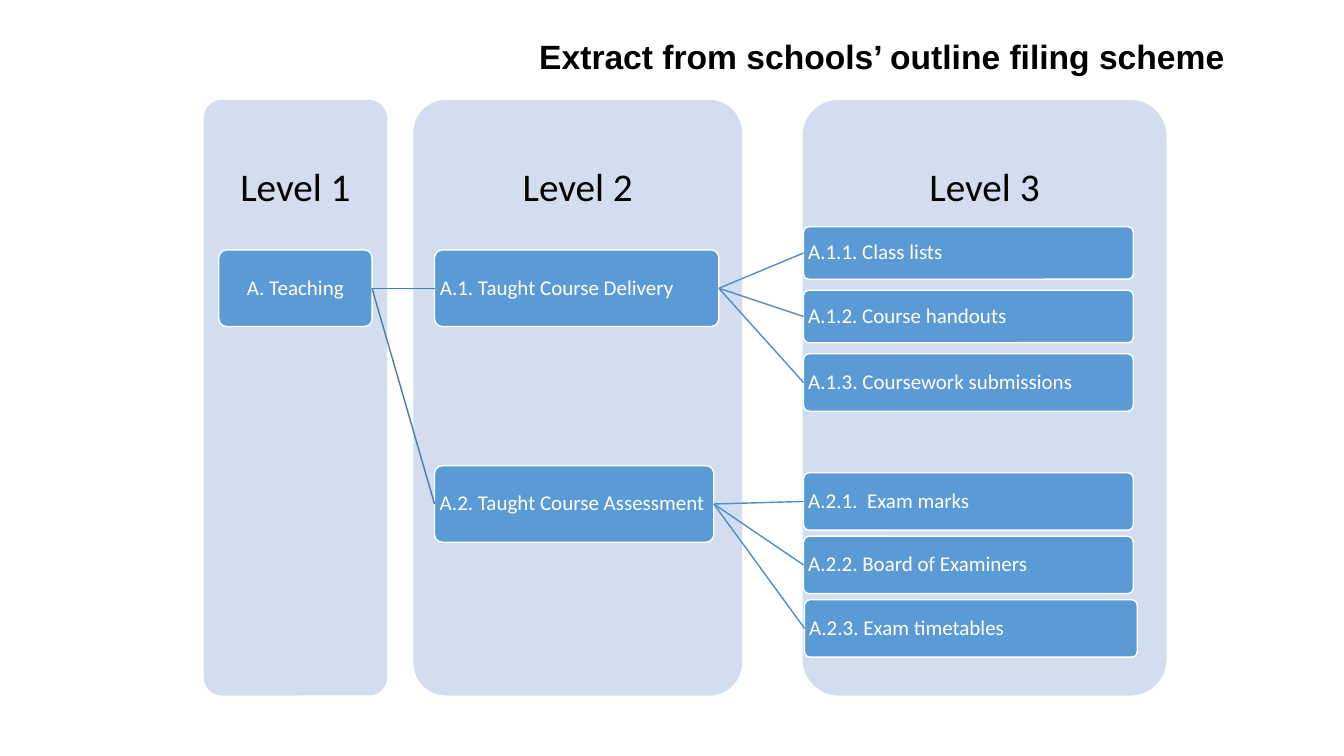
import pptx
import pptx.util
import pptx.dml.color
import pptx.enum.shapes
import pptx.enum.text
import pptx.oxml.ns
from lxml import etree

# Content
TITLE = "Extract from schools’ outline filing scheme"
LEVELS = ["Level 1", "Level 2", "Level 3"]
ROOT = "A. Teaching"
# Each branch: text, width, top of first leaf, leaves as (text, height, width, shift right)
BRANCHES = [
    ("A.1. Taught Course Delivery", 2.82, 2.25, [
        ("A.1.1. Class lists", 0.52, 3.27, 0),
        ("A.1.2. Course handouts", 0.52, 3.27, 0),
        ("A.1.3. Coursework submissions", 0.57, 3.27, 0),
    ]),
    ("A.2. Taught Course Assessment", 2.77, 4.69, [
        ("A.2.1.  Exam marks", 0.57, 3.27, 0),
        ("A.2.2. Board of Examiners", 0.57, 3.27, 0),
        ("A.2.3. Exam timetables", 0.57, 3.3, 0.01),
    ]),
]
COLORS = {"panel": "D2DEEF", "node": "5B9BD5", "white": "FFFFFF", "black": "000000",
          "root line": "497CAB", "branch line": "538DC1"}

# Grid in inches
SLIDE_WIDTH, SLIDE_HEIGHT = 13.33, 7.5
PANEL_COLUMNS = [(2.02, 1.82), (4.1, 3.26), (7.96, 3.61)]
PANEL_TOP, PANEL_HEIGHT = 0.99, 5.91
HEADING_HEIGHT = 0.3 * PANEL_HEIGHT
ROOT_LEFT, BRANCH_LEFT, LEAF_LEFT = 2.17, 4.31, 7.97
ROOT_WIDTH, NODE_HEIGHT = 1.52, 0.76
BRANCH_TOP, BRANCH_PITCH = 2.48, 2.14
LEAF_PITCH = 0.63
LEFT_SIDE, RIGHT_SIDE = 1, 3

ALIGN = pptx.enum.text.PP_ALIGN
ANCHOR = pptx.enum.text.MSO_ANCHOR
inches = pptx.util.Inches

presentation = pptx.Presentation()
presentation.slide_width = inches(SLIDE_WIDTH)
presentation.slide_height = inches(SLIDE_HEIGHT)
slide = presentation.slides.add_slide(presentation.slide_layouts[6])


def color(name):
    return pptx.dml.color.RGBColor.from_string(COLORS[name])


def write(shape, text, *, size, fill="black", font="Calibri", bold=False,
          align=ALIGN.LEFT, anchor=ANCHOR.MIDDLE, margins=(0.03, 0.03), spacing=0.9):
    frame = shape.text_frame
    frame.word_wrap = True
    frame.vertical_anchor = anchor
    frame.margin_left = frame.margin_right = inches(margins[0])
    frame.margin_top = frame.margin_bottom = inches(margins[1])
    paragraph = frame.paragraphs[0]
    paragraph.alignment = align
    paragraph.line_spacing = spacing
    run = paragraph.add_run()
    run.text = text
    run.font.name = font
    run.font.size = pptx.util.Pt(size)
    run.font.bold = bold
    run.font.color.rgb = color(fill)


def add_box(left, top, width, height, fill, outline=None):
    shape = slide.shapes.add_shape(pptx.enum.shapes.MSO_SHAPE.ROUNDED_RECTANGLE,
                                   inches(left), inches(top), inches(width), inches(height))
    shape.adjustments[0] = 0.1
    shape.shadow.inherit = False
    shape.fill.solid()
    shape.fill.fore_color.rgb = color(fill)
    if outline:
        shape.line.color.rgb = color(outline)
        shape.line.width = pptx.util.Pt(1)
    else:
        shape.line.fill.background()
    return shape


def add_node(text, left, top, width, height, align=ALIGN.LEFT):
    node = add_box(left, top, width, height, "node", "white")
    write(node, text, size=15, fill="white", align=align)
    return node


def join(parent, child, line_color):
    connector = slide.shapes.add_connector(pptx.enum.shapes.MSO_CONNECTOR.STRAIGHT, 0, 0, 0, 0)
    connector.begin_connect(parent, RIGHT_SIDE)
    connector.end_connect(child, LEFT_SIDE)
    connector.line.color.rgb = color(line_color)
    connector.line.width = pptx.util.Pt(1)
    etree.SubElement(connector._element.spPr, pptx.oxml.ns.qn("a:effectLst"))


# Level panels and headings
for level, (left, width) in zip(LEVELS, PANEL_COLUMNS):
    add_box(left, PANEL_TOP, width, PANEL_HEIGHT, "panel")
    heading = slide.shapes.add_textbox(inches(left), inches(PANEL_TOP),
                                       inches(width), inches(HEADING_HEIGHT))
    write(heading, level, size=28, align=ALIGN.CENTER, margins=(0.22, 0.22))

# Filing tree
root = add_node(ROOT, ROOT_LEFT, BRANCH_TOP, ROOT_WIDTH, NODE_HEIGHT, ALIGN.CENTER)
for row, (branch_text, branch_width, first_top, leaves) in enumerate(BRANCHES):
    branch = add_node(branch_text, BRANCH_LEFT, BRANCH_TOP + row * BRANCH_PITCH,
                      branch_width, NODE_HEIGHT)
    join(root, branch, "root line")
    for index, (leaf_text, height, width, shift) in enumerate(leaves):
        leaf = add_node(leaf_text, LEAF_LEFT + shift, first_top + index * LEAF_PITCH,
                        width, height)
        join(branch, leaf, "branch line")

# Title
title = slide.shapes.add_textbox(inches(5.25), inches(0.31), inches(7.16), inches(0.51))
write(title, TITLE, size=24, font="Arial", bold=True, anchor=ANCHOR.TOP,
      margins=(0.1, 0.05), spacing=1.0)

presentation.save("out.pptx")
